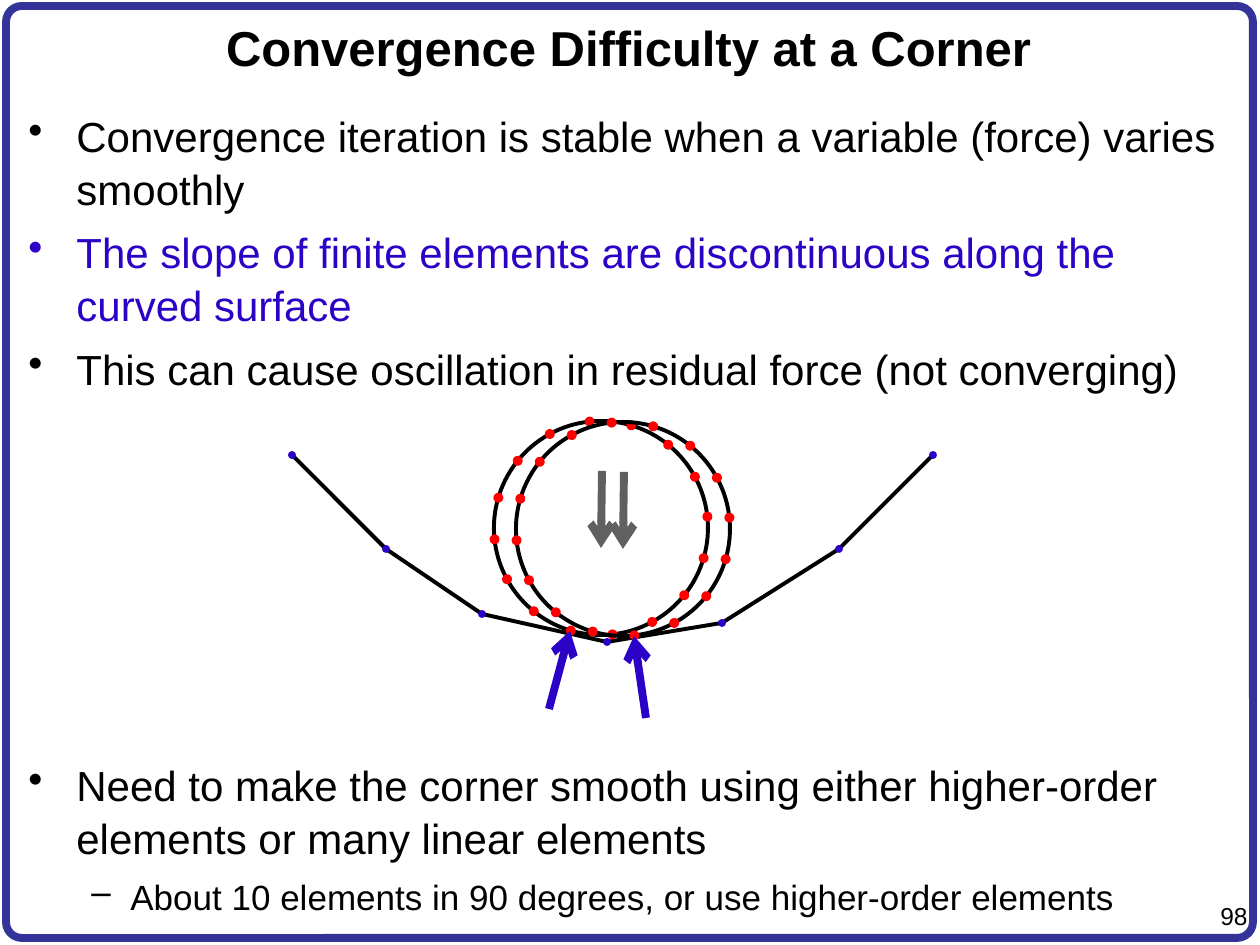
import math

from lxml import etree
from pptx import Presentation
from pptx.dml.color import RGBColor
from pptx.enum.shapes import MSO_CONNECTOR, MSO_SHAPE
from pptx.enum.text import MSO_ANCHOR, PP_ALIGN
from pptx.oxml.ns import qn
from pptx.util import Pt

STRAIGHT = MSO_CONNECTOR.STRAIGHT
OVAL, ROUNDED = MSO_SHAPE.OVAL, MSO_SHAPE.ROUNDED_RECTANGLE
MIDDLE = MSO_ANCHOR.MIDDLE
CENTER, RIGHT = PP_ALIGN.CENTER, PP_ALIGN.RIGHT

PX = 914400 // 126
BLACK = RGBColor(0x00, 0x00, 0x00)
NAVY = RGBColor(0x33, 0x33, 0x99)
BLUE = RGBColor(0x2C, 0x02, 0xC6)
RED = RGBColor(0xFF, 0x00, 0x00)
GRAY = RGBColor(0x60, 0x60, 0x60)

TITLE = "Convergence Difficulty at a Corner"
PAGE_NUMBER = "98"

# (text, level, colour)
PROBLEM = [
    ("Convergence iteration is stable when a variable (force) varies smoothly", 0, BLACK),
    ("The slope of finite elements are discontinuous along the curved surface", 0, BLUE),
    ("This can cause oscillation in residual force (not converging)", 0, BLACK),
]
REMEDY = [
    ("Need to make the corner smooth using either higher-order elements "
     "or many linear elements", 0, BLACK),
    ("About 10 elements in 90 degrees, or use higher-order elements", 1, BLACK),
]
# level: (bullet, left margin px, hanging px, point size)
LEVELS = {0: ("•", 48, 48, 24), 1: ("–", 102, 39, 20)}

SURFACE_NODES = [(292, 455), (386, 549), (482, 614), (607, 642),
                 (722, 623), (839, 549), (933, 455)]
# (wheel centre, start and end of the contact force)
WHEELS = [
    ((601, 528), (549, 709), (570, 631)),
    ((623, 529), (646, 718), (634, 636)),
]
WHEEL_RADIUS = 107
WHEEL_NODES = 16
WHEEL_TURN = -6.1
NODE_RADIUS = 3


def add_outlined(shapes, kind, box, color, width, fill=None):
    shape = shapes.add_shape(kind, *(round(v * PX) for v in box))
    style_outline(shape, color, width)
    if fill is not None:
        shape.fill.solid()
        shape.fill.fore_color.rgb = fill
    return shape


def style_outline(shape, color, width):
    shape.shadow.inherit = False
    shape.fill.background()
    shape.line.color.rgb = color
    shape.line.width = Pt(width)


def add_circle(shapes, center, radius, color, width, fill=None):
    x, y = center
    box = (x - radius, y - radius, 2 * radius, 2 * radius)
    return add_outlined(shapes, OVAL, box, color, width, fill)


def add_arrow(shapes, start, end, color):
    arrow = shapes.add_connector(STRAIGHT, *(v * PX for v in start + end))
    arrow.line.color.rgb = color
    arrow.line.width = Pt(4.5)
    etree.SubElement(arrow.line._get_or_add_ln(), qn("a:tailEnd"), type="arrow")
    etree.SubElement(arrow._element.spPr, qn("a:effectLst"))


def add_text_frame(shapes, box):
    frame = shapes.add_textbox(*(v * PX for v in box)).text_frame
    frame.word_wrap = True
    return frame


def write(paragraph, text, size, color=BLACK, bold=False):
    paragraph.text = text
    font = paragraph.font
    font.name, font.size, font.bold = "Arial", Pt(size), bold
    font.color.rgb = color


def add_bullets(shapes, box, items):
    frame = add_text_frame(shapes, box)
    for index, (text, level, color) in enumerate(items):
        paragraph = frame.add_paragraph() if index else frame.paragraphs[0]
        bullet, margin, hanging, size = LEVELS[level]
        paragraph.level = level
        paragraph.line_spacing = 1.05
        paragraph.space_before = Pt(6)
        properties = paragraph._p.get_or_add_pPr()
        properties.set("marL", str(margin * PX))
        properties.set("indent", str(-hanging * PX))
        etree.SubElement(properties, qn("a:buChar"), char=bullet)
        write(paragraph, text, size, color)


def add_surface(shapes):
    builder = shapes.build_freeform(*SURFACE_NODES[0], scale=PX)
    builder.add_line_segments(SURFACE_NODES[1:], close=False)
    style_outline(builder.convert_to_shape(), BLACK, 2.25)
    for node in SURFACE_NODES:
        add_circle(shapes, node, NODE_RADIUS, BLUE, 1, BLUE)


def add_wheel(shapes, center, force_start, force_end):
    x, y = center
    add_circle(shapes, center, WHEEL_RADIUS, BLACK, 2.25)
    for index in range(WHEEL_NODES):
        angle = math.radians(WHEEL_TURN + index * 360 / WHEEL_NODES)
        node = (x + WHEEL_RADIUS * math.sin(angle), y - WHEEL_RADIUS * math.cos(angle))
        add_circle(shapes, node, NODE_RADIUS, RED, 2.25, RED)
    add_arrow(shapes, (x + 1, y - 57), (x, y + 20), GRAY)
    add_arrow(shapes, force_start, force_end, BLUE)


def main():
    presentation = Presentation()
    presentation.slide_width, presentation.slide_height = 1260 * PX, 945 * PX
    shapes = presentation.slides.add_slide(presentation.slide_layouts[6]).shapes

    border = add_outlined(shapes, ROUNDED, (6, 6, 1247, 932), NAVY, 4.5)
    border.adjustments[0] = 0.017

    number = add_text_frame(shapes, (1192, 895, 68, 42)).paragraphs[0]
    number.alignment = RIGHT
    write(number, PAGE_NUMBER, 14)

    title = add_text_frame(shapes, (5, 6, 1247, 82))
    title.vertical_anchor = MIDDLE
    title.paragraphs[0].alignment = CENTER
    write(title.paragraphs[0], TITLE, 28, bold=True)

    add_bullets(shapes, (16, 102, 1227, 290), PROBLEM)
    add_bullets(shapes, (16, 751, 1227, 169), REMEDY)

    add_surface(shapes.add_group_shape().shapes)
    for wheel in WHEELS:
        add_wheel(shapes.add_group_shape().shapes, *wheel)

    presentation.save("out.pptx")


if __name__ == "__main__":
    main()
